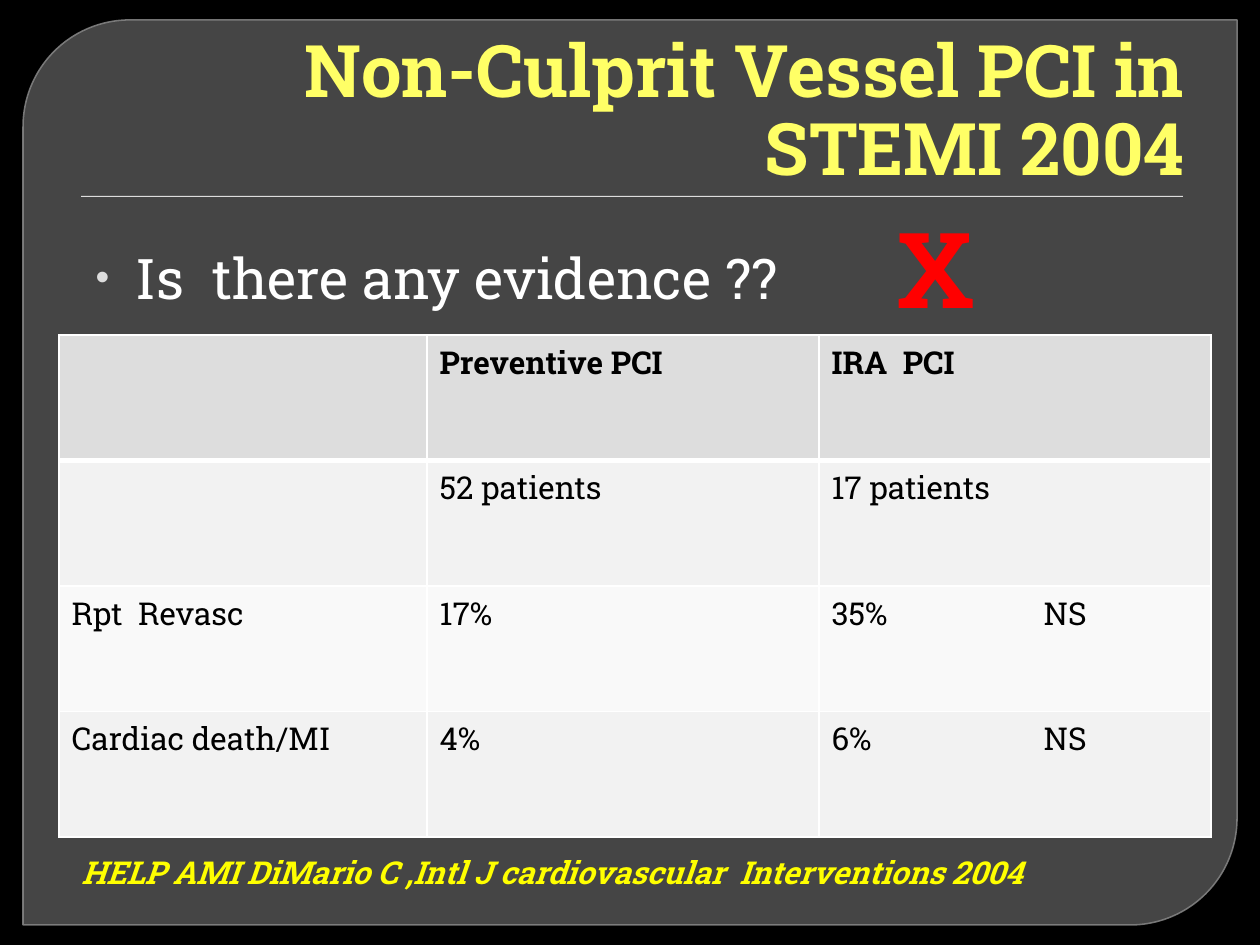
"""Build the slide on non-culprit vessel PCI in STEMI."""
import pptx
import pptx.dml.color
import pptx.enum.shapes
import pptx.enum.text
import pptx.oxml
import pptx.oxml.ns
import pptx.util

EMU_PER_PX = 914400 / 126
ALIGN = pptx.enum.text.PP_ALIGN
ANCHOR = pptx.enum.text.MSO_ANCHOR
SHAPE = pptx.enum.shapes.MSO_SHAPE
NAMESPACE = pptx.oxml.ns.nsdecls("a")


def px(length):
    """Turn pixels into EMU."""
    return pptx.util.Emu(round(length * EMU_PER_PX))


def rgb(value):
    """Turn a hex string into a colour."""
    return pptx.dml.color.RGBColor.from_string(value)


def assign(target, values):
    """Set each attribute named in the dict."""
    for name, value in values.items():
        setattr(target, name, value)


def xml(text):
    """Parse a drawing element, adding its namespace."""
    tag, rest = text.split(" ", 1)
    return pptx.oxml.parse_xml(f"{tag} {NAMESPACE} {rest}")


def outline(tag, color, points):
    """Make a solid line element."""
    return xml(f'<a:{tag} w="{round(points * 12700)}"><a:solidFill>'
               f'<a:srgbClr val="{color}"/></a:solidFill></a:{tag}>')


def set_alpha(fill_parent, percent):
    """Give the solid colour under an element its opacity."""
    color = fill_parent.find(pptx.oxml.ns.qn("a:solidFill"))[0]
    color.append(xml(f'<a:alpha val="{percent * 1000}"/>'))


class SlideBuilder:
    """Hold the style and the current slide."""

    font = "Roboto Slab"

    def __init__(self, presentation, background):
        """Add a title and content slide with a plain background."""
        self.slide = presentation.slides.add_slide(presentation.slide_layouts[1])
        fill = self.slide.background.fill
        fill.solid()
        fill.fore_color.rgb = rgb(background)

    def fill_text(self, frame, text, size, color, paragraph_format=None, **font_format):
        """Put one styled paragraph into a text frame."""
        paragraph = frame.paragraphs[0]
        assign(paragraph, paragraph_format or {})
        run = paragraph.add_run()
        run.text = text
        values = {"name": self.font, "size": pptx.util.Pt(size), **font_format}
        assign(run.font, values)
        run.font.color.rgb = rgb(color)
        return paragraph, run

    def shape(self, kind, box, color):
        """Add a filled shape with neither line nor shadow."""
        shape = self.slide.shapes.add_shape(kind, *map(px, box))
        shape.shadow.inherit = False
        shape.fill.solid()
        shape.fill.fore_color.rgb = rgb(color)
        shape.line.fill.background()
        return shape

    def panel(self, box, color, line_color):
        """Add the translucent panel with two round corners."""
        panel = self.shape(SHAPE.ROUND_2_DIAG_RECTANGLE, box, color)
        panel.adjustments[0] = 0.118
        panel.line.color.rgb = rgb(line_color)
        panel.line.width = pptx.util.Pt(0.87)
        set_alpha(panel.element.spPr, 65)
        set_alpha(panel.element.spPr.find(pptx.oxml.ns.qn("a:ln")), 88)

    def placeholder(self, index, box, text, size, color, frame_format,
                    paragraph_format, **font_format):
        """Place and fill a template placeholder above the panel."""
        holder = self.slide.placeholders[index]
        assign(holder, dict(zip(("left", "top", "width", "height"), map(px, box))))
        holder.element.getparent().append(holder.element)
        assign(holder.text_frame, {"word_wrap": True,
                                   "auto_size": pptx.enum.text.MSO_AUTO_SIZE.NONE,
                                   **frame_format})
        return self.fill_text(holder.text_frame, text, size, color,
                              paragraph_format, **font_format)[0]

    def bullet(self, paragraph, color, percent, indent):
        """Give a paragraph a hanging round bullet."""
        properties = paragraph._p.get_or_add_pPr()
        properties.set("marL", str(px(indent)))
        properties.set("indent", str(-px(indent)))
        properties.append(xml(f'<a:buClr ><a:srgbClr val="{color}"/></a:buClr>'))
        properties.append(xml(f'<a:buSzPct val="{percent * 1000}"/>'))
        properties.append(xml('<a:buFont typeface="Arial"/>'))
        properties.append(xml('<a:buChar char="•"/>'))

    def text(self, box, text, size, color, paragraph_format=None, **font_format):
        """Add a wrapping text box and return its run."""
        frame = self.slide.shapes.add_textbox(*map(px, box)).text_frame
        frame.word_wrap = True
        return self.fill_text(frame, text, size, color, paragraph_format, **font_format)[1]

    def table(self, box, widths, rows, fills, tab):
        """Add a table with white borders and a heavy rule under its header."""
        table = self.slide.shapes.add_table(len(rows), len(widths), *map(px, box)).table
        for column, width in zip(table.columns, widths):
            column.width = px(width)
        for row, (texts, fill) in enumerate(zip(rows, fills)):
            for column, text in enumerate(texts):
                cell = table.cell(row, column)
                cell.fill.solid()
                cell.fill.fore_color.rgb = rgb(fill)
                self.borders(cell, top=3 if row == 1 else 1, bottom=3 if row == 0 else 1)
                if text:
                    paragraph, _ = self.fill_text(cell.text_frame, text, 18, "000000",
                                                  bold=row == 0)
                    if "\t" in text:
                        paragraph._p.get_or_add_pPr().append(xml(
                            f'<a:tabLst ><a:tab pos="{px(tab)}" algn="l"/></a:tabLst>'))

    def borders(self, cell, top, bottom):
        """Draw the four white borders of a cell."""
        properties = cell._tc.get_or_add_tcPr()
        sides = {"lnL": 1, "lnR": 1, "lnT": top, "lnB": bottom}
        for position, (tag, points) in enumerate(sides.items()):
            properties.insert(position, outline(tag, "FFFFFF", points))


def main():
    """Build and save the presentation."""
    presentation = pptx.Presentation()
    assign(presentation, {"slide_width": px(1260), "slide_height": px(945)})
    builder = SlideBuilder(presentation, "000000")
    builder.panel((23, 20, 1214, 905), "6B6B6B", "848484")
    builder.shape(SHAPE.RECTANGLE, (81, 196, 1102, 1), "DDDDDD")
    builder.placeholder(
        0, (63, 35, 1134, 158), "Non-Culprit Vessel PCI in STEMI 2004", 41.4, "FFFF66",
        {"vertical_anchor": ANCHOR.BOTTOM, "margin_bottom": px(2)},
        {"alignment": ALIGN.RIGHT, "line_spacing": 0.9}, bold=True)
    question = builder.placeholder(
        1, (83, 237, 1134, 624), "Is  there any evidence ??", 32, "FFFFFF",
        {"vertical_anchor": ANCHOR.TOP}, {"space_before": pptx.util.Pt(0)})
    builder.bullet(question, "DDDDDD", 70, 40)
    rows = [
        ("", "Preventive PCI", "IRA  PCI"),
        ("", "52 patients", "17 patients"),
        ("Rpt  Revasc", "17%", "35%\tNS"),
        ("Cardiac death/MI", "4%", "6%\tNS"),
    ]
    builder.table((59, 335, 1152, 502), (368, 392, 392), rows,
                  ("DDDDDD", "F2F2F2", "F9F9F9", "F2F2F2"), tab=212)
    builder.text((69, 847, 1152, 50),
                 "HELP AMI DiMario C ,Intl J cardiovascular  Interventions 2004",
                 18, "FFFF00", bold=True, italic=True)
    cross = builder.text((798, 197, 276, 140), "X", 60, "FF0000",
                         {"alignment": ALIGN.CENTER}, bold=True)
    cross.font._element.insert(0, outline("ln", "FEFEFE", 1.4))
    presentation.save("out.pptx")


if __name__ == "__main__":
    main()
